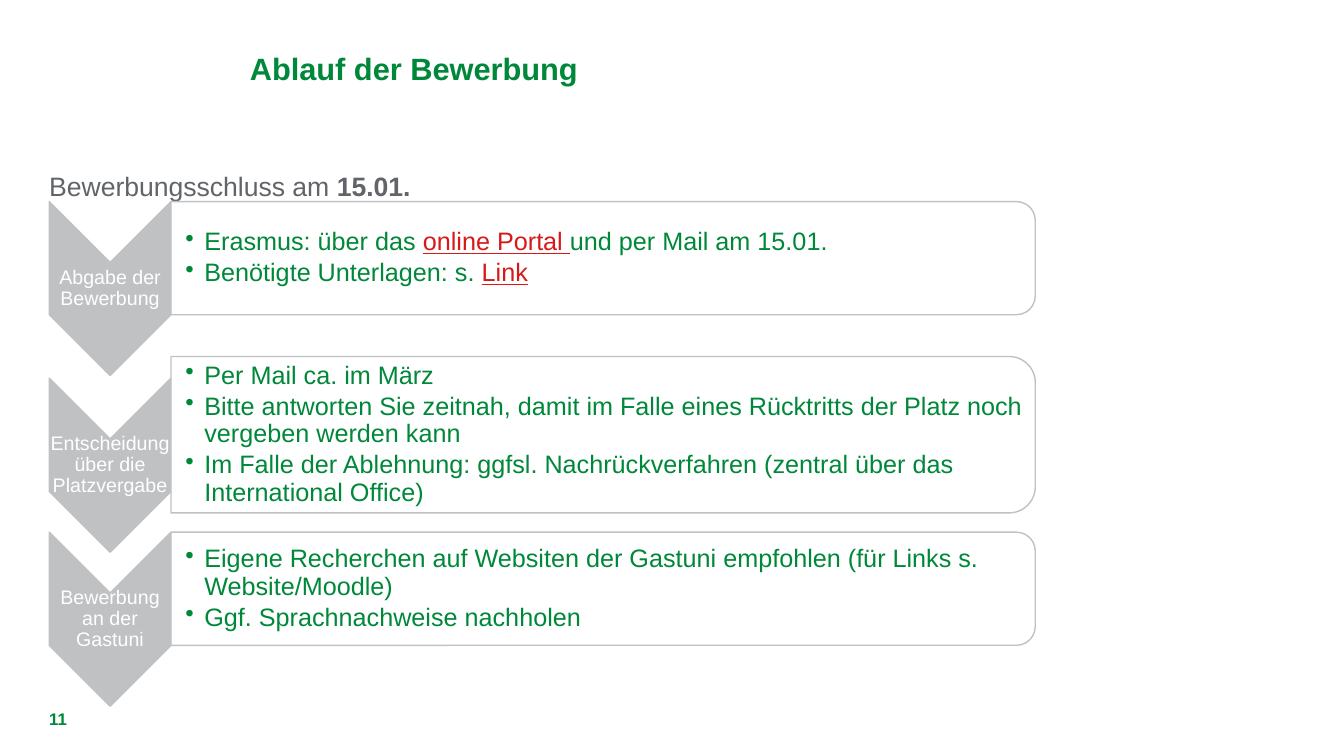
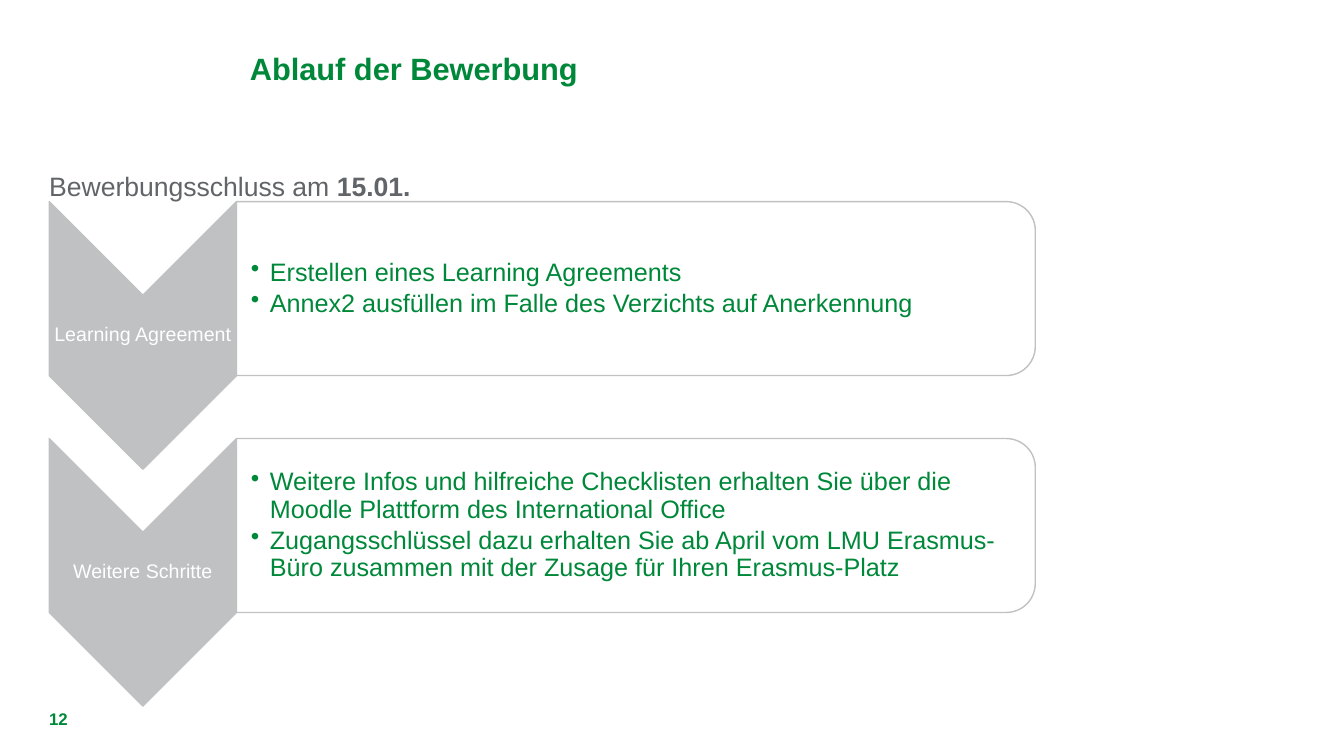
from dataclasses import dataclass
from typing import NamedTuple

from lxml.etree import SubElement
from pptx import Presentation
from pptx.dml.color import RGBColor
from pptx.enum.shapes import MSO_SHAPE
from pptx.enum.text import MSO_ANCHOR, PP_ALIGN
from pptx.oxml.ns import qn
from pptx.util import Cm, Length, Pt


@dataclass(frozen=True)
class Theme:
    font: str = "Arial"
    green: str = "00883A"
    slate: str = "616468"
    grey: str = "C0C1C3"
    red: str = "D71919"
    white: str = "FFFFFF"
    title_size: int = 22
    deadline_size: int = 19
    detail_size: int = 18
    label_size: int = 14
    number_size: int = 12


THEME = Theme()


class Box(NamedTuple):
    left: float
    top: float
    width: float
    height: float

    def lengths(self) -> list[Length]:
        return [Cm(value) for value in self]

    def before_quarter_turn(self) -> "Box":
        shift = (self.width - self.height) / 2
        return Box(self.left + shift, self.top - shift, self.height, self.width)


class Span(NamedTuple):
    text: str
    bold: bool = False
    link: bool = False


@dataclass(frozen=True)
class Step:
    label: str
    top: float
    details: list[list[Span]]
    panel_height: float | None = None


@dataclass(frozen=True)
class Stage:
    number: int
    arrow_width: float
    steps: list[Step]


TITLE = "Ablauf der Bewerbung"
DEADLINE = [Span("Bewerbungsschluss am "), Span("15.01.", bold=True)]
FLOW_LEFT = 1.24
FLOW_RIGHT = 26.09
FLOW_TOP = 5.08
ARROW_RATIO = 0.7
PANEL_RATIO = 0.65
CORNER_INSET = 0.05

STAGES = [
    Stage(11, 3.07, [
        Step("Abgabe der Bewerbung", FLOW_TOP, [
            [Span("Erasmus: über das "), Span("online Portal ", link=True),
             Span("und per Mail am 15.01.")],
            [Span("Benötigte Unterlagen: s. "), Span("Link", link=True)],
        ]),
        Step("Entscheidung über die Platzvergabe", 9.53, [
            [Span("Per Mail ca. im März")],
            [Span("Bitte antworten Sie zeitnah, damit im Falle eines Rücktritts "
                  "der Platz noch vergeben werden kann")],
            [Span("Im Falle der Ablehnung: ggfsl. Nachrückverfahren "
                  "(zentral über das International Office)")],
        ], panel_height=3.94),
        Step("Bewerbung an der Gastuni", 13.41, [
            [Span("Eigene Recherchen auf Websiten der Gastuni empfohlen "
                  "(für Links s. Website/Moodle)")],
            [Span("Ggf. Sprachnachweise nachholen")],
        ]),
    ]),
    Stage(12, 4.72, [
        Step("Learning Agreement", FLOW_TOP, [
            [Span("Erstellen eines Learning Agreements")],
            [Span("Annex2 ausfüllen im Falle des Verzichts auf Anerkennung")],
        ]),
        Step("Weitere Schritte", 11.05, [
            [Span("Weitere Infos und hilfreiche Checklisten erhalten Sie über die "
                  "Moodle Plattform des International Office")],
            [Span("Zugangsschlüssel dazu erhalten Sie ab April vom LMU Erasmus-Büro "
                  "zusammen mit der Zusage für Ihren Erasmus-Platz")],
        ]),
    ]),
]


def add_text(slide, box: Box, paragraphs: list[list[Span]], *, size: int,
             color: str, bold: bool = False, align=PP_ALIGN.LEFT,
             anchor=MSO_ANCHOR.TOP, inset: float = 0, inset_left: float | None = None,
             inset_top: float | None = None, line_spacing: float | Length = 0.9,
             space_after: float = 0, bullet: str = "", indent: float = 0.48) -> None:
    frame = slide.shapes.add_textbox(*box.lengths()).text_frame
    frame.word_wrap = True
    frame.vertical_anchor = anchor
    frame.margin_left = Cm(inset if inset_left is None else inset_left)
    frame.margin_top = Cm(inset if inset_top is None else inset_top)
    frame.margin_right = frame.margin_bottom = Cm(inset)
    for index, spans in enumerate(paragraphs):
        paragraph = frame.add_paragraph() if index else frame.paragraphs[0]
        if bullet:
            properties = paragraph._p.get_or_add_pPr()
            properties.set("marL", str(Cm(indent)))
            properties.set("indent", str(-Cm(indent)))
            SubElement(properties, qn("a:buChar"), char=bullet)
        paragraph.alignment = align
        paragraph.line_spacing = line_spacing
        paragraph.space_after = Pt(space_after)
        for span in spans:
            run = paragraph.add_run()
            run.text = span.text
            run.font.name = THEME.font
            run.font.size = Pt(size)
            run.font.bold = bold or span.bold
            run.font.underline = span.link
            run.font.color.rgb = RGBColor.from_string(THEME.red if span.link else color)


def add_turned_shape(slide, kind: MSO_SHAPE, box: Box, fill: str,
                     opacity: int = 100) -> None:
    shape = slide.shapes.add_shape(kind, *box.before_quarter_turn().lengths())
    shape.rotation = 90
    shape.shadow.inherit = False
    shape.fill.solid()
    shape.fill.fore_color.rgb = RGBColor.from_string(fill)
    shape.line.color.rgb = RGBColor.from_string(THEME.grey)
    shape.line.width = Pt(1)
    if opacity < 100:
        fill_color = shape._element.spPr.find(qn("a:solidFill")).find(qn("a:srgbClr"))
        SubElement(fill_color, qn("a:alpha"), val=str(opacity * 1000))


def add_step(slide, step: Step, arrow_width: float) -> None:
    arrow_height = arrow_width / ARROW_RATIO
    arrow = Box(FLOW_LEFT, step.top, arrow_width, arrow_height)
    add_turned_shape(slide, MSO_SHAPE.CHEVRON, arrow, THEME.grey)
    label = Box(FLOW_LEFT, step.top + arrow_width / 2,
                arrow_width, arrow_height - arrow_width)
    add_text(slide, label, [[Span(step.label)]], size=THEME.label_size,
             color=THEME.white, align=PP_ALIGN.CENTER, anchor=MSO_ANCHOR.MIDDLE,
             inset=0.02)

    usual_height = arrow_height * PANEL_RATIO
    height = step.panel_height or usual_height
    left = FLOW_LEFT + arrow_width
    panel = Box(left, step.top - (height - usual_height) / 2, FLOW_RIGHT - left, height)
    add_turned_shape(slide, MSO_SHAPE.ROUND_2_SAME_RECTANGLE, panel, THEME.white, 90)
    corner = height * CORNER_INSET
    details = Box(left, panel.top + corner, panel.width - corner, height - 2 * corner)
    add_text(slide, details, step.details, size=THEME.detail_size, color=THEME.green,
             anchor=MSO_ANCHOR.MIDDLE, inset=0.02, inset_left=0.36,
             space_after=2.7, bullet="•")


def add_stage(deck, stage: Stage) -> None:
    slide = deck.slides.add_slide(deck.slide_layouts[6])
    add_text(slide, Box(FLOW_LEFT, 17.86, 2, 0.76), [[Span(str(stage.number))]],
             size=THEME.number_size, color=THEME.green, bold=True, line_spacing=1.0)
    add_text(slide, Box(6.05, 1.24, 26.6, 2.9), [[Span(TITLE)]],
             size=THEME.title_size, color=THEME.green, bold=True,
             inset_left=0.25, inset_top=0.13)
    add_text(slide, Box(0.99, 4.14, 28.25, 2.62), [DEADLINE],
             size=THEME.deadline_size, color=THEME.slate,
             inset_left=0.25, inset_top=0.13, line_spacing=Pt(22.8))
    for step in stage.steps:
        add_step(slide, step, stage.arrow_width)


def main() -> None:
    deck = Presentation()
    deck.slide_width = Cm(33.87)
    deck.slide_height = Cm(19.05)
    for stage in STAGES:
        add_stage(deck, stage)
    deck.save("out.pptx")


if __name__ == "__main__":
    main()
